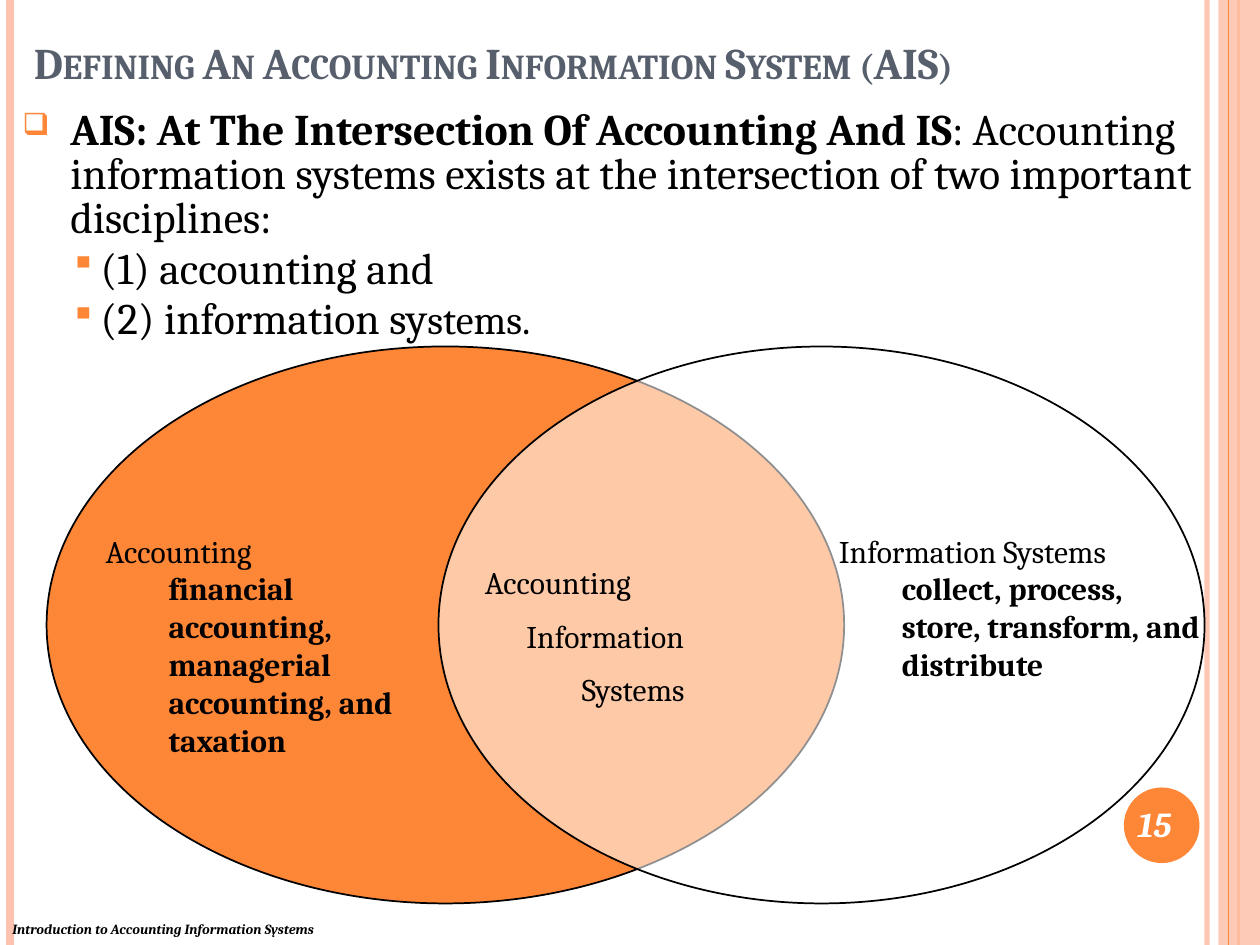
from dataclasses import dataclass, field

from lxml.etree import SubElement
from pptx import Presentation
from pptx.dml.color import RGBColor
from pptx.enum.shapes import MSO_CONNECTOR, MSO_SHAPE
from pptx.enum.text import MSO_ANCHOR as Anchor, PP_ALIGN as Align
from pptx.oxml.ns import qn
from pptx.util import Inches, Pt


@dataclass(frozen=True)
class Theme:
    font: str = "Cambria"
    orange: str = "FE8637"
    peach: str = "FEC3AE"
    slate: str = "575F6D"
    black: str = "000000"
    white: str = "FFFFFF"
    heading: int = 25
    body_tail: int = 23
    number: int = 20
    label: int = 18
    footer: int = 8


THEME = Theme()


@dataclass(frozen=True)
class Box:
    left: float
    top: float
    width: float
    height: float

    def lengths(self) -> list:
        return [Inches(v) for v in (self.left, self.top, self.width, self.height)]


@dataclass(frozen=True)
class Rule:
    x: float
    color: str
    weight: float
    opacity: int = 100


@dataclass(frozen=True)
class Run:
    text: str
    size: int
    color: str = THEME.black
    bold: bool = False
    italic: bool = False
    small_caps: bool = False


@dataclass(frozen=True)
class Bullet:
    symbol: str
    percent: int


@dataclass(frozen=True)
class Para:
    runs: list[Run]
    indent: float = 0
    hanging: float = 0
    bullet: Bullet | None = None
    format: dict = field(default_factory=dict)


def set_opacity(color_parent, percent: int) -> None:
    if percent < 100:
        for color in color_parent.iter(qn("a:srgbClr")):
            SubElement(color, qn("a:alpha"), val=str(percent * 1000))


def draw_rule(slide, rule: Rule, height: float) -> None:
    line = slide.shapes.add_connector(
        MSO_CONNECTOR.STRAIGHT, Inches(rule.x), 0, Inches(rule.x), Inches(height))
    line.line.color.rgb = RGBColor.from_string(rule.color)
    line.line.width = Pt(rule.weight)
    properties = line._element.spPr
    set_opacity(properties, rule.opacity)
    SubElement(properties, qn("a:effectLst"))


def draw_shape(slide, kind: MSO_SHAPE, box: Box, fill: str,
               opacity: int = 100, outlined: bool = False) -> None:
    shape = slide.shapes.add_shape(kind, *box.lengths())
    shape.shadow.inherit = False
    shape.fill.solid()
    shape.fill.fore_color.rgb = RGBColor.from_string(fill)
    set_opacity(shape._element.spPr, opacity)
    if outlined:
        shape.line.color.rgb = RGBColor.from_string(THEME.black)
        shape.line.width = Pt(1)
    else:
        shape.line.fill.background()


def add_bullet(properties, bullet: Bullet) -> None:
    color = SubElement(properties, qn("a:buClr"))
    SubElement(color, qn("a:srgbClr"), val=THEME.orange)
    SubElement(properties, qn("a:buSzPct"), val=str(bullet.percent * 1000))
    SubElement(properties, qn("a:buChar"), char=bullet.symbol)


def fill_paragraph(paragraph, para: Para) -> None:
    for name, value in para.format.items():
        setattr(paragraph, name, value)
    properties = paragraph._p.get_or_add_pPr()
    properties.set("marL", str(Inches(para.indent)))
    properties.set("indent", str(-Inches(para.hanging)))
    if para.bullet:
        add_bullet(properties, para.bullet)
    for part in para.runs:
        run = paragraph.add_run()
        run.text = part.text
        font_format = {"name": THEME.font, "size": Pt(part.size),
                       "bold": part.bold, "italic": part.italic}
        for name, value in font_format.items():
            setattr(run.font, name, value)
        run.font.color.rgb = RGBColor.from_string(part.color)
        if part.small_caps:
            run.font._element.set("cap", "small")


def write(slide, box: Box, paras: list[Para], anchor: Anchor = Anchor.TOP) -> None:
    frame = slide.shapes.add_textbox(*box.lengths()).text_frame
    frame.word_wrap = True
    frame.vertical_anchor = anchor
    for index, para in enumerate(paras):
        paragraph = frame.add_paragraph() if index else frame.paragraphs[0]
        fill_paragraph(paragraph, para)


def label(text: str, indent: float = 0, bold: bool = False, before: int = 0) -> Para:
    return Para([Run(text, THEME.label, bold=bold)], indent,
                format={"space_before": Pt(before)})


def draw_frame(slide, height: float) -> None:
    """Draw the side rules, the right band and the page-number disc."""
    for rule in (Rule(9.58, THEME.peach, 3, 93), Rule(0.08, THEME.peach, 4.5),
                 Rule(9.83, THEME.orange, 1.5)):
        draw_rule(slide, rule, height)
    draw_shape(slide, MSO_SHAPE.RECTANGLE, Box(9.67, 0, 0.33, height), THEME.peach, 87)
    draw_rule(slide, Rule(9.75, THEME.orange, 0.75), height)
    draw_shape(slide, MSO_SHAPE.OVAL, Box(8.92, 6.25, 0.6, 0.6), THEME.orange)


def write_body(slide) -> None:
    size = THEME.heading
    spacing = {"line_spacing": Pt(25), "space_before": Pt(2), "space_after": Pt(2)}
    disciplines = [[Run("(1) accounting and", size)],
                   [Run("(2) information sy", size), Run("stems.", THEME.body_tail)]]
    intro = Para([Run("AIS: At The Intersection Of Accounting And IS", size, bold=True),
                  Run(": Accounting information systems exists at the intersection "
                      "of two important disciplines:", size)],
                 0.38, 0.38, Bullet("❑", 70), spacing)
    items = [Para(runs, 0.62, 0.24, Bullet("▪", 80), {**spacing, "level": 1})
             for runs in disciplines]
    write(slide, Box(0.08, 0.83, 9.58, 6.25), [intro, *items])


def draw_venn(slide) -> None:
    draw_shape(slide, MSO_SHAPE.OVAL, Box(0.37, 2.75, 6.33, 4.42),
               THEME.orange, outlined=True)
    draw_shape(slide, MSO_SHAPE.OVAL, Box(3.48, 2.75, 6.08, 4.42),
               THEME.white, 56, outlined=True)
    write(slide, Box(3.75, 4.42, 2.67, 1.31), [
        label("Accounting"),
        label("Information", 0.33, before=9),
        label("Systems", 0.77, before=9)])
    write(slide, Box(0.74, 4.17, 3, 1.92), [
        label("Accounting"),
        label("financial accounting,", 0.5, bold=True),
        label("managerial accounting, and taxation", 0.5, bold=True)])
    write(slide, Box(6.56, 4.17, 3.08, 1.31), [
        label("Information Systems"),
        label("collect, process, store, transform, and distribute", 0.5, bold=True)])


def main() -> None:
    width, height = 10, 7.5
    deck = Presentation()
    deck.slide_width, deck.slide_height = Inches(width), Inches(height)
    slide = deck.slides.add_slide(deck.slide_layouts[6])

    draw_frame(slide, height)
    title = Run("Defining An Accounting Information System (AIS)", THEME.heading,
                THEME.slate, bold=True, small_caps=True)
    write(slide, Box(0.17, -0.08, 9.67, 0.83),
          [Para([title], format={"space_before": Pt(1), "space_after": Pt(1)})],
          Anchor.BOTTOM)
    write_body(slide)
    number = Run("15", THEME.number, THEME.white, bold=True, italic=True)
    write(slide, Box(8.83, 6.25, 0.67, 0.57),
          [Para([number], format={"alignment": Align.CENTER})], Anchor.MIDDLE)
    footer = Run("Introduction to Accounting Information Systems", THEME.footer,
                 bold=True, italic=True)
    write(slide, Box(0, 7.26, width, 0.24), [Para([footer])])
    draw_venn(slide)
    deck.save("out.pptx")


if __name__ == "__main__":
    main()
